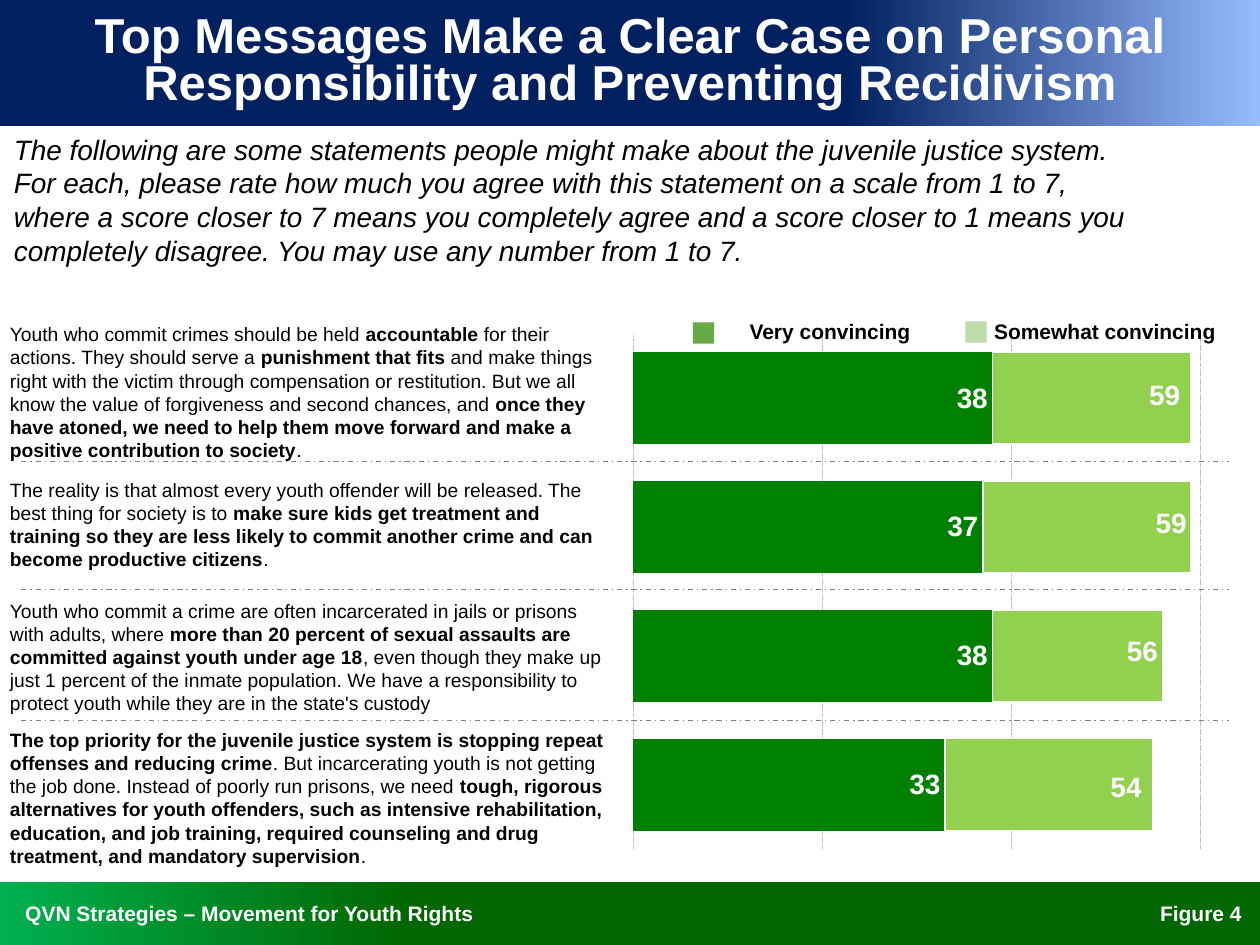
from lxml.etree import SubElement
from pptx import Presentation
from pptx.chart.data import CategoryChartData
from pptx.dml.color import RGBColor
from pptx.enum.chart import XL_CHART_TYPE, XL_LABEL_POSITION, XL_TICK_LABEL_POSITION, XL_TICK_MARK
from pptx.enum.dml import MSO_LINE
from pptx.enum.shapes import MSO_CONNECTOR, MSO_SHAPE
from pptx.enum.text import MSO_ANCHOR, MSO_AUTO_SIZE, PP_ALIGN
from pptx.oxml import parse_xml
from pptx.oxml.ns import qn
from pptx.util import Cm, Pt

COLORS = {
    "white": "FFFFFF", "black": "000000", "navy": "002060", "sky": "98BAFF",
    "emerald": "00B050", "forest": "006600", "very": "008000", "somewhat": "92D050",
    "very key": "68AA45", "somewhat key": "BCDDA8", "rule": "808080", "grid": "C0C0C0",
}
NAMESPACES = ('xmlns:c="http://schemas.openxmlformats.org/drawingml/2006/chart" '
              'xmlns:a="http://schemas.openxmlformats.org/drawingml/2006/main"')

INTRO = (
    "The following are some statements people might make about the juvenile justice system. "
    "For each, please rate how much you agree with this statement on a scale from 1 to 7, "
    "where a score closer to 7 means you completely agree and a score closer to 1 means you "
    "completely disagree. You may use any number from 1 to 7.")

# Top, height and wording of each message; ** switches bold on and off.
MESSAGES = [
    (6.5, 2.8, "Youth who commit crimes should be held **accountable** for their actions. They "
     "should serve a **punishment that fits** and make things right with the victim through "
     "compensation or restitution. But we all know the value of forgiveness and second chances, "
     "and **once they have atoned, we need to help them move forward and make a positive "
     "contribution to society**."),
    (9.63, 1.88, "The reality is that almost every youth offender will be released. The best "
     "thing for society is to **make sure kids get treatment and training so they are less "
     "likely to commit another crime and can become productive citizens**."),
    (12.07, 2.34, "Youth who commit a crime are often incarcerated in jails or prisons with "
     "adults, where **more than 20 percent of sexual assaults are committed against youth under "
     "age 18**, even though they make up just 1 percent of the inmate population. We have a "
     "responsibility to protect youth while they are in the state's custody"),
    (14.68, 2.8, "**The top priority for the juvenile justice system is stopping repeat offenses "
     "and reducing crime**. But incarcerating youth is not getting the job done. Instead of "
     "poorly run prisons, we need **tough, rigorous alternatives for youth offenders, such as "
     "intensive rehabilitation, education, and job training, required counseling and drug "
     "treatment, and mandatory supervision**."),
]
# Listed from the bottom bar to the top bar.
VERY = [33, 38, 37, 38]
SOMEWHAT = [22, 18, 22, 21]
TOTAL_PLACES = [(22.38, 15.52), (22.71, 12.78), (23.29, 10.19), (23.16, 7.62)]


def color(name):
    return RGBColor.from_string(COLORS[name])


class SlideBuilder:
    font_name = "Arial"

    def __init__(self, page):
        self.page = page

    def style(self, font, size, ink="black", bold=None, italic=None):
        font.name, font.size = self.font_name, Pt(size)
        font.bold, font.italic = bold, italic
        font.color.rgb = color(ink)

    def rectangle(self, left, top, width, height):
        shape = self.page.shapes.add_shape(
            MSO_SHAPE.RECTANGLE, Cm(left), Cm(top), Cm(width), Cm(height))
        shape.shadow.inherit = False
        shape.line.fill.background()
        return shape

    def band(self, top, height, start, end, angle):
        fill = self.rectangle(0, top, 25.4, height).fill
        fill.gradient()
        fill.gradient_angle = angle
        for stop, name, position in zip(fill.gradient_stops, (start, end), (0, 0.33)):
            stop.color.rgb = color(name)
            stop.position = position

    def key(self, left, top, name):
        fill = self.rectangle(left, top, 0.43, 0.43).fill
        fill.solid()
        fill.fore_color.rgb = color(name)

    def title(self, words):
        box = self.page.shapes.title
        box.left, box.top, box.width, box.height = Cm(0), Cm(0), Cm(25.4), Cm(2.54)
        frame = box.text_frame
        frame.auto_size = MSO_AUTO_SIZE.NONE
        frame.vertical_anchor = MSO_ANCHOR.MIDDLE
        frame.margin_left = frame.margin_right = Cm(0.51)
        para = frame.paragraphs[0]
        para.text = words
        para.alignment, para.line_spacing = PP_ALIGN.CENTER, 0.8
        self.style(para.font, 28, "white", bold=True)

    def text(self, left, top, width, height, words, size, ink="black", bold=None, italic=None,
             align=PP_ALIGN.LEFT, anchor=MSO_ANCHOR.TOP, margins=(0, 0), wrap=True):
        """Margins are (sides, top and bottom); ** in the words toggles bold."""
        box = self.page.shapes.add_textbox(Cm(left), Cm(top), Cm(width), Cm(height))
        frame = box.text_frame
        frame.word_wrap, frame.vertical_anchor = wrap, anchor
        frame.margin_left = frame.margin_right = Cm(margins[0])
        frame.margin_top = frame.margin_bottom = Cm(margins[1])
        para = frame.paragraphs[0]
        para.alignment = align
        self.style(para.font, size, ink, bold, italic)
        for index, part in enumerate(words.split("**")):
            if part:
                span = para.add_run()
                span.text = part
                if index % 2:
                    span.font.bold = True

    def rule(self, top):
        line = self.page.shapes.add_connector(
            MSO_CONNECTOR.STRAIGHT, Cm(0.43), Cm(top), Cm(24.77), Cm(top))
        line.line.color.rgb = color("rule")
        line.line.width, line.line.dash_style = Pt(0.75), MSO_LINE.DASH_DOT
        SubElement(line._element.spPr, qn("a:effectLst"))

    def bar_chart(self, left, top, width, height):
        data = CategoryChartData()
        data.categories = ["1", "2", "3", "4"]
        data.add_series("Very convincing", VERY)
        data.add_series("Somewhat convincing", SOMEWHAT)
        chart = self.page.shapes.add_chart(
            XL_CHART_TYPE.BAR_STACKED, Cm(left), Cm(top), Cm(width), Cm(height), data).chart
        chart.has_legend = chart.has_title = False
        self.style(chart.font, 17.6)
        plot = chart.plots[0]
        plot.gap_width, plot.overlap, plot.vary_by_categories = 40, 100, False
        for series, name in zip(plot.series, ("very", "somewhat")):
            series.format.fill.solid()
            series.format.fill.fore_color.rgb = color(name)
        series.format.line.color.rgb = color("white")
        series.format.line.width = Pt(1)
        labels = plot.series[0].data_labels
        labels.show_value, labels.position = True, XL_LABEL_POSITION.INSIDE_END
        self.style(labels.font, 16, "white", bold=True)

        for axis in (chart.category_axis, chart.value_axis):
            axis.tick_label_position = XL_TICK_LABEL_POSITION.NONE
            axis.major_tick_mark = XL_TICK_MARK.NONE
            axis.format.line.fill.background()
        axis.minimum_scale, axis.maximum_scale, axis.major_unit = 0, 60, 20
        axis.has_major_gridlines = True
        grid = axis.major_gridlines.format.line
        grid.color.rgb = color("grid")
        grid.width, grid.dash_style = Pt(0.25), MSO_LINE.SQUARE_DOT
        self.fix_plot_area(chart, {"x": 0.126, "y": 0.002, "w": 0.801, "h": 0.836})

    def fix_plot_area(self, chart, place):
        """Pin the inner plot area and make the chart background clear."""
        modes = "".join(f'<c:{side}Mode val="edge"/>' for side in "xy")
        sizes = "".join(f'<c:{side} val="{value}"/>' for side, value in place.items())
        layout = parse_xml(f'<c:layout {NAMESPACES}><c:manualLayout><c:layoutTarget val="inner"/>'
                           f'{modes}{sizes}</c:manualLayout></c:layout>')
        body = chart._chartSpace.find(qn("c:chart"))
        area = body.find(qn("c:plotArea"))
        for old in area.findall(qn("c:layout")):
            area.remove(old)
        area.insert(0, layout)
        body.addnext(parse_xml(f'<c:spPr {NAMESPACES}><a:noFill/><a:ln><a:noFill/></a:ln></c:spPr>'))


def main():
    deck = Presentation()
    deck.slide_width, deck.slide_height = Cm(25.4), Cm(19.05)
    page = deck.slides.add_slide(deck.slide_layouts[5])
    slide = SlideBuilder(page)

    slide.band(17.78, 1.27, "emerald", "forest", 0)
    slide.band(0, 2.54, "sky", "navy", 180)
    # The title comes first in the layout, so lift it above the bands.
    page.shapes._spTree.append(page.shapes.title._element)
    slide.title("Top Messages Make a Clear Case on Personal Responsibility "
                "and Preventing Recidivism")
    footer = dict(size=12, ink="white", bold=True, anchor=MSO_ANCHOR.MIDDLE)
    slide.text(0, 17.78, 17.58, 1.27, "QVN Strategies – Movement for Youth Rights",
               margins=(0.51, 0.13), **footer)
    slide.bar_chart(10.97, 6.71, 14.27, 12.42)
    slide.text(22.86, 17.78, 2.54, 1.27, "Figure 4 ", align=PP_ALIGN.RIGHT,
               margins=(0.25, 0.13), **footer)
    slide.text(0.03, 2.54, 22.99, 3.76, INTRO, 16, italic=True, margins=(0.25, 0.13))

    slide.key(13.97, 6.5, "very key")
    slide.text(15.11, 6.43, 3.61, 0.51, "Very convincing", 12, bold=True)
    slide.key(19.46, 6.48, "somewhat key")
    slide.text(20.04, 6.43, 5.08, 0.51, "Somewhat convincing", 12, bold=True)

    for top in (9.3, 11.89, 14.53):
        slide.rule(top)
    for top, height, words in MESSAGES:
        slide.text(0.2, top, 12.07, height, words, 11, anchor=MSO_ANCHOR.MIDDLE)
    for (left, top), very, somewhat in zip(TOTAL_PLACES, VERY, SOMEWHAT):
        total = {55: 54}.get(very + somewhat, very + somewhat)  # 54 is the rounded total
        slide.text(left, top, 0.64, 0.69, str(total), 16, "white", bold=True,
                   align=PP_ALIGN.CENTER, wrap=False)
    deck.save("out.pptx")


if __name__ == "__main__":
    main()
